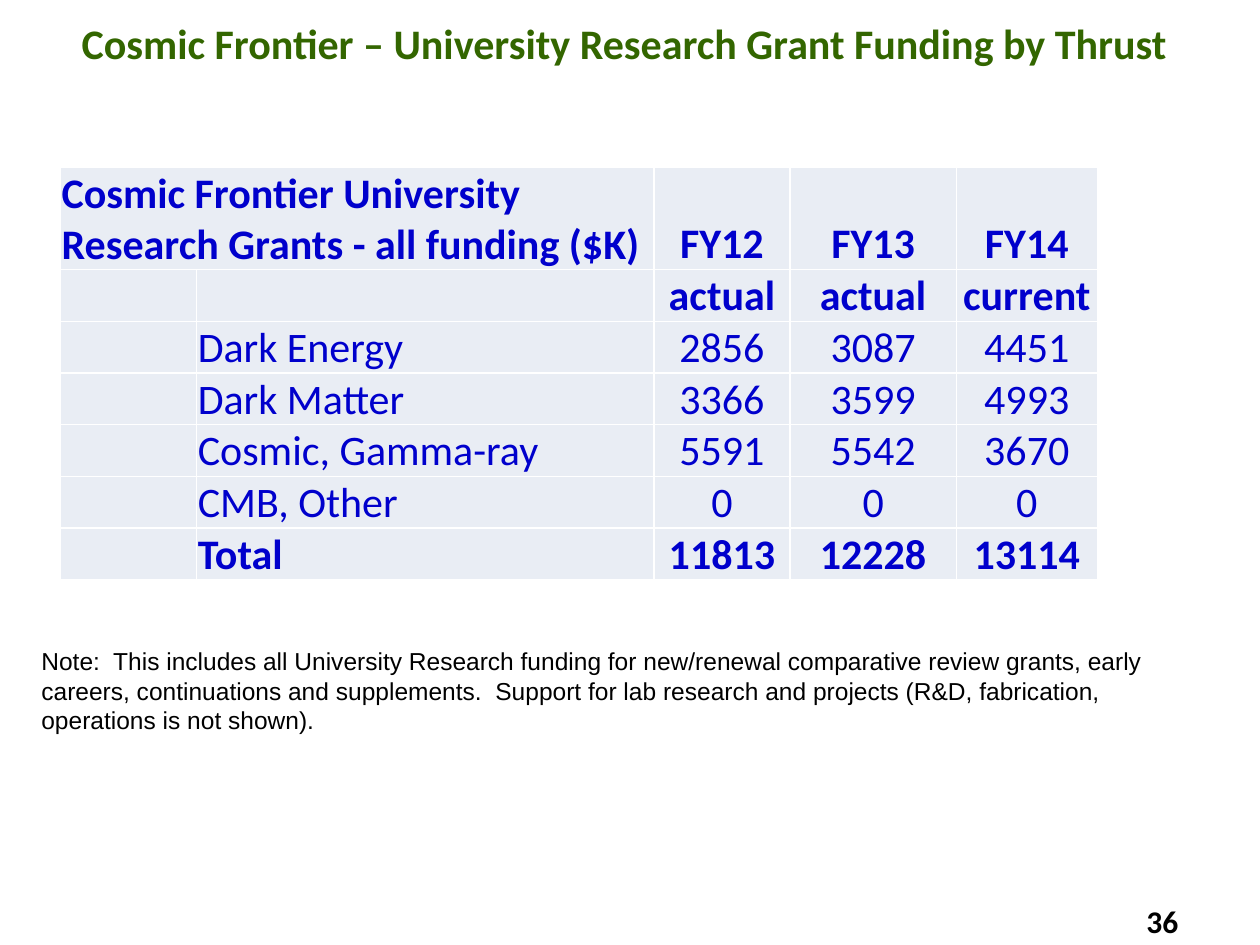
from dataclasses import dataclass

from lxml.etree import SubElement
from pptx import Presentation
from pptx.dml.color import RGBColor
from pptx.enum.text import MSO_ANCHOR, PP_ALIGN
from pptx.oxml.ns import qn
from pptx.util import Inches, Pt


@dataclass(frozen=True)
class Theme:
    heading_font: str = "Calibri"
    note_font: str = "Arial"
    green: str = "336600"
    blue: str = "0000CC"
    black: str = "000000"
    white: str = "FFFFFF"
    cell_fill: str = "E9EDF4"
    large: int = 24
    page: int = 18
    small: int = 14


THEME = Theme()

HEADING = "Cosmic Frontier – University Research Grant Funding by Thrust"
NOTE = (
    "Note:  This includes all University Research funding for new/renewal "
    "comparative review grants, early careers, continuations and supplements.  "
    "Support for lab research and projects (R&D, fabrication, operations is not shown)."
)
GRANTS = [
    ["Cosmic Frontier University Research Grants - all funding ($K)", "", "FY12", "FY13", "FY14"],
    ["", "", "actual", "actual", "current"],
    ["", "Dark Energy", "2856", "3087", "4451"],
    ["", "Dark Matter", "3366", "3599", "4993"],
    ["", "Cosmic, Gamma-ray", "5591", "5542", "3670"],
    ["", "CMB, Other", "0", "0", "0"],
    ["", "Total", "11813", "12228", "13114"],
]
BOLD_ROWS = {0, 1, len(GRANTS) - 1}
COLUMN_WIDTHS = [1.08, 3.63, 1.08, 1.32, 1.12]
HEADER_HEIGHT, ROW_HEIGHT = 0.81, 0.41


def write(frame, text, font, size, color, bold=False, align=PP_ALIGN.LEFT):
    frame.text = text
    frame.word_wrap = True
    paragraph = frame.paragraphs[0]
    paragraph.alignment = align
    for run in paragraph.runs:
        run.font.name = font
        run.font.size = Pt(size)
        run.font.bold = bold
        run.font.color.rgb = RGBColor.from_string(color)


def add_borders(cell):
    """Draw a thin white line on each side; lines must precede the cell fill."""
    properties = cell._tc.get_or_add_tcPr()
    for side in ("lnL", "lnR", "lnT", "lnB"):
        line = SubElement(properties, qn(f"a:{side}"), w=str(Pt(1)))
        fill = SubElement(line, qn("a:solidFill"))
        SubElement(fill, qn("a:srgbClr"), val=THEME.white)


def place_title(slide, box):
    title = slide.shapes.title
    title.left, title.top, title.width, title.height = map(Inches, box)
    title.fill.solid()
    title.fill.fore_color.rgb = RGBColor.from_string(THEME.white)
    title.text_frame.vertical_anchor = MSO_ANCHOR.MIDDLE
    write(title.text_frame, HEADING, THEME.heading_font, THEME.large,
          THEME.green, bold=True, align=PP_ALIGN.CENTER)


def format_cell(cell, text, bold, align):
    cell.margin_left = cell.margin_right = cell.margin_top = Inches(0.01)
    cell.margin_bottom = 0
    cell.vertical_anchor = MSO_ANCHOR.BOTTOM
    add_borders(cell)
    cell.fill.solid()
    cell.fill.fore_color.rgb = RGBColor.from_string(THEME.cell_fill)
    if text:
        write(cell.text_frame, text, THEME.heading_font, THEME.large,
              THEME.blue, bold, align)


def place_grants(slide, box):
    grants = slide.shapes.add_table(
        len(GRANTS), len(COLUMN_WIDTHS), *map(Inches, box)).table
    grants.first_row = grants.horz_banding = False
    for column, width in zip(grants.columns, COLUMN_WIDTHS):
        column.width = Inches(width)
    for index, (row, values) in enumerate(zip(grants.rows, GRANTS)):
        row.height = Inches(ROW_HEIGHT if index else HEADER_HEIGHT)
        for position, (cell, value) in enumerate(zip(row.cells, values)):
            align = PP_ALIGN.LEFT if position < 2 else PP_ALIGN.CENTER
            format_cell(cell, value, index in BOLD_ROWS, align)
    grants.cell(0, 0).merge(grants.cell(0, 1))


def place_text(slide, box, text, font, size, bold=False):
    frame = slide.shapes.add_textbox(*map(Inches, box)).text_frame
    write(frame, text, font, size, THEME.black, bold)


def main():
    deck = Presentation()
    deck.slide_width, deck.slide_height = Inches(10), Inches(7.5)
    slide = deck.slides.add_slide(deck.slide_layouts[5])
    place_title(slide, (0.23, 0, 9.45, 0.67))
    place_text(slide, (9, 7.11, 0.58, 0.4), "36", THEME.heading_font, THEME.page, bold=True)
    place_grants(slide, (0.48, 1.33, 8.23, 3.27))
    place_text(slide, (0.23, 5.08, 9.32, 0.81), NOTE, THEME.note_font, THEME.small)
    deck.save("out.pptx")


if __name__ == "__main__":
    main()
